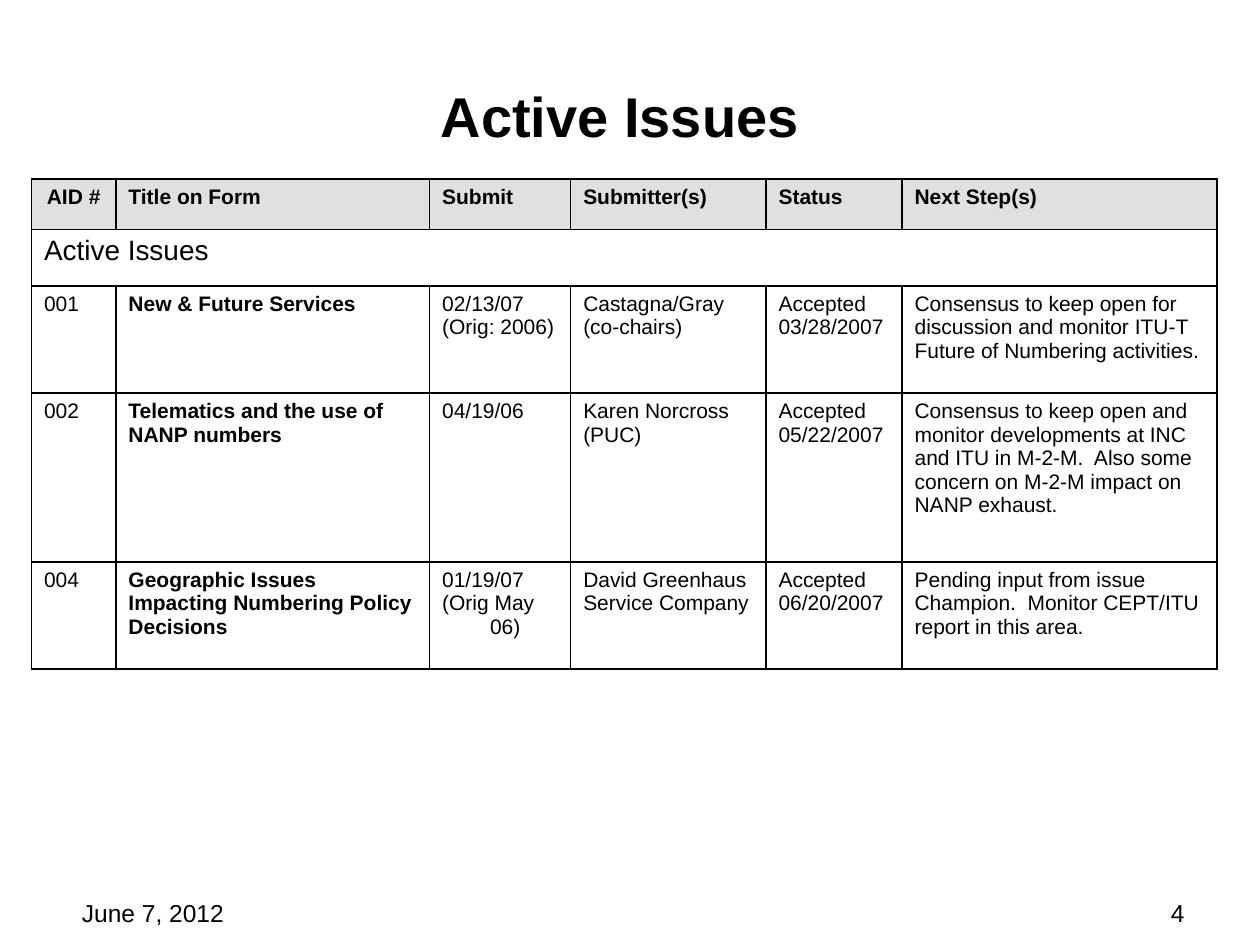
from dataclasses import dataclass

from lxml.etree import SubElement
from pptx import Presentation
from pptx.dml.color import RGBColor
from pptx.enum.text import MSO_ANCHOR as Anchor, PP_ALIGN as Align
from pptx.oxml.ns import qn
from pptx.slide import Slide
from pptx.table import _Cell as Cell
from pptx.util import Inches, Pt

WIDTH, HEIGHT = 10, 7.5


@dataclass(frozen=True)
class Theme:
    font: str = "Arial"
    ink: str = "000000"
    paper: str = "FFFFFF"
    header: str = "E0E0E0"
    title: int = 32
    section: int = 16
    body: int = 12
    footer: int = 14
    rule: int = 1
    hang: float = 0.38


@dataclass(frozen=True)
class Column:
    heading: str
    width: float
    bold: bool = False
    hanging: bool = False


@dataclass(frozen=True)
class Issue:
    height: float
    values: tuple[str, ...]


@dataclass(frozen=True)
class Footer:
    text: str
    left: float
    align: Align
    inset: float


THEME = Theme()

COLUMNS = (
    Column("AID #", 0.67, hanging=True),
    Column("Title on Form", 2.49, bold=True),
    Column("Submit", 1.12, hanging=True),
    Column("Submitter(s)", 1.55),
    Column("Status", 1.08),
    Column("Next Step(s)", 2.5),
)

ISSUES = (
    Issue(0.85, (
        "001", "New & Future Services", "02/13/07\n(Orig: 2006)",
        "Castagna/Gray\n(co-chairs)", "Accepted\n03/28/2007",
        "Consensus to keep open for discussion and monitor ITU-T "
        "Future of Numbering activities.",
    )),
    Issue(1.34, (
        "002", "Telematics and the use of NANP numbers", "04/19/06",
        "Karen Norcross\n(PUC)", "Accepted\n05/22/2007",
        "Consensus to keep open and monitor developments at INC and ITU in "
        "M-2-M.  Also some concern on M-2-M impact on NANP exhaust.",
    )),
    Issue(0.85, (
        "004", "Geographic Issues Impacting Numbering Policy Decisions",
        "01/19/07\n(Orig May 06)", "David Greenhaus\nService Company",
        "Accepted\n06/20/2007",
        "Pending input from issue Champion.  Monitor CEPT/ITU report in this area.",
    )),
)

HEADER_HEIGHT, SECTION_HEIGHT = 0.4, 0.45

FOOTERS = (
    Footer("June 7, 2012", 0.05, Align.LEFT, 0.15),
    Footer("4", 0.717, Align.RIGHT, 0.1),
)


def apply(target, values: dict) -> None:
    for name, value in values.items():
        setattr(target, name, value)


def write(frame, text: str, size: int, bold: bool = False,
          align: Align = Align.LEFT, hanging: bool = False) -> None:
    frame.text = text
    frame.word_wrap = True
    for para in frame.paragraphs:
        para.alignment = align
        if hanging:
            props = para._p.get_or_add_pPr()
            props.set("marL", str(Inches(THEME.hang)))
            props.set("indent", str(-Inches(THEME.hang)))
        for span in para.runs:
            apply(span.font, {"name": THEME.font, "size": Pt(size), "bold": bold})
            span.font.color.rgb = RGBColor.from_string(THEME.ink)


def style_cell(cell: Cell, fill: str) -> None:
    cell.fill.solid()
    cell.fill.fore_color.rgb = RGBColor.from_string(fill)
    props = cell._tc.get_or_add_tcPr()
    for index, side in enumerate(("lnL", "lnR", "lnT", "lnB")):
        line = props.makeelement(qn(f"a:{side}"), {"w": str(Pt(THEME.rule))})
        solid = SubElement(line, qn("a:solidFill"))
        SubElement(solid, qn("a:srgbClr"), val=THEME.ink)
        props.insert(index, line)


def add_title(page: Slide, text: str) -> None:
    box = page.shapes.title
    apply(box, {"left": Inches(0.05 * WIDTH), "top": Inches(0.42),
                "width": Inches(0.9 * WIDTH), "height": Inches(0.83)})
    apply(box.text_frame, {"vertical_anchor": Anchor.MIDDLE,
                           "margin_top": Inches(0.21),
                           "margin_right": Inches(0.26)})
    write(box.text_frame, text, THEME.title, True, Align.CENTER)


def add_issue_table(page: Slide, section: str) -> None:
    heights = (HEADER_HEIGHT, SECTION_HEIGHT, *(issue.height for issue in ISSUES))
    table = page.shapes.add_table(
        len(heights), len(COLUMNS), Inches(0.25), Inches(1.42),
        Inches(sum(column.width for column in COLUMNS)), Inches(sum(heights)),
    ).table
    apply(table, {"first_row": False, "horz_banding": False})
    for row, height in zip(table.rows, heights):
        row.height = Inches(height)
    for cell in table.iter_cells():
        style_cell(cell, THEME.paper)
    for index, column in enumerate(COLUMNS):
        table.columns[index].width = Inches(column.width)
        heading = table.cell(0, index)
        heading.fill.fore_color.rgb = RGBColor.from_string(THEME.header)
        write(heading.text_frame, column.heading, THEME.body, True,
              Align.LEFT if index else Align.CENTER, column.hanging)
        for number, issue in enumerate(ISSUES, start=2):
            write(table.cell(number, index).text_frame, issue.values[index],
                  THEME.body, column.bold, hanging=column.hanging)
    banner = table.cell(1, 0)
    banner.merge(table.cell(1, len(COLUMNS) - 1))
    write(banner.text_frame, section, THEME.section)


def add_footer(page: Slide, footer: Footer) -> None:
    box = page.shapes.add_textbox(
        Inches(footer.left * WIDTH), Inches(7.08), Inches(2.33), Inches(0.27))
    box.text_frame.margin_left = Inches(footer.inset)
    write(box.text_frame, footer.text, THEME.footer, align=footer.align)


def main() -> None:
    deck = Presentation()
    apply(deck, {"slide_width": Inches(WIDTH), "slide_height": Inches(HEIGHT)})
    page = deck.slides.add_slide(deck.slide_layouts.get_by_name("Title Only"))
    add_title(page, "Active Issues")
    add_issue_table(page, "Active Issues")
    for footer in FOOTERS:
        add_footer(page, footer)
    deck.save("out.pptx")


if __name__ == "__main__":
    main()
